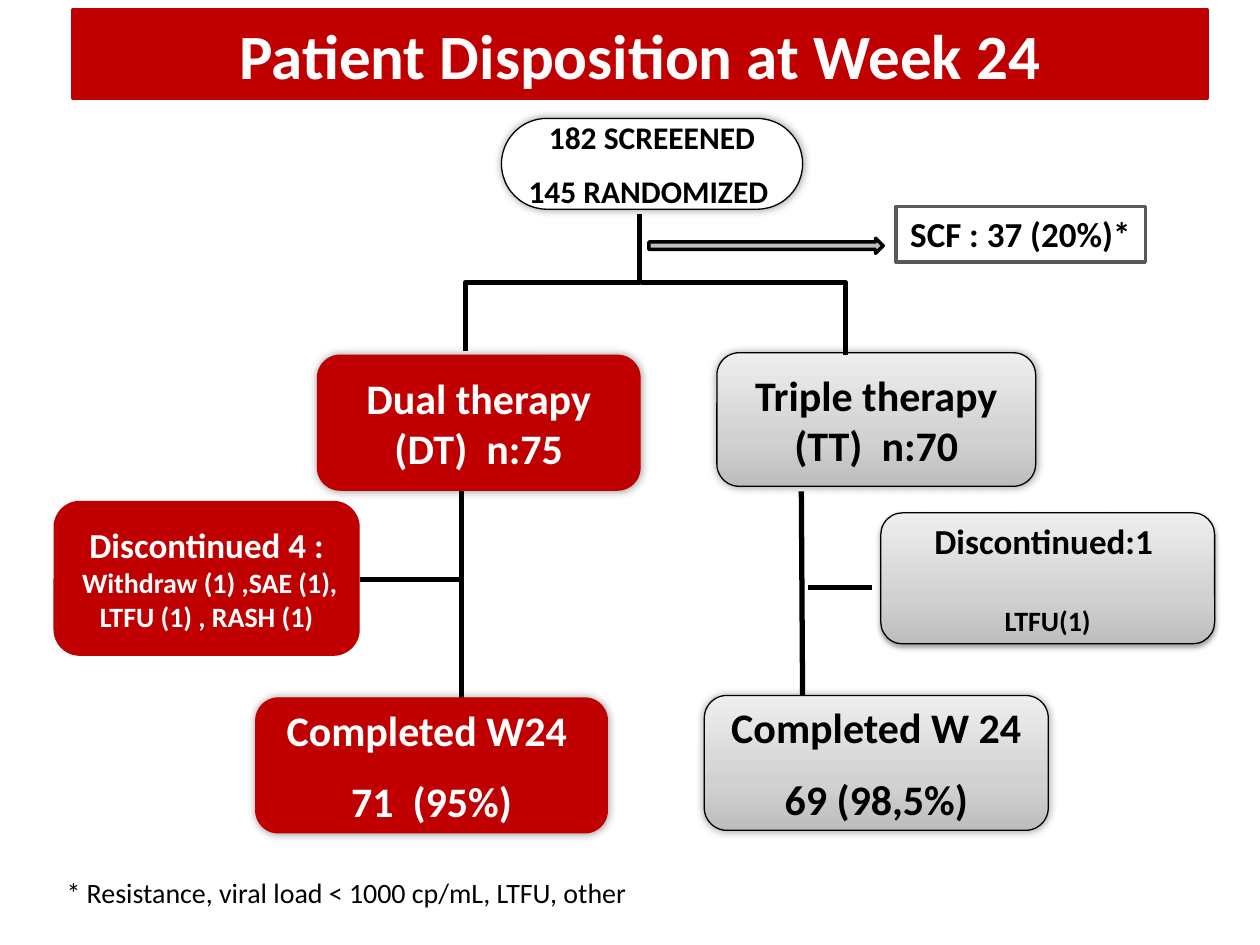
from copy import deepcopy
from lxml.etree import SubElement
from pptx import Presentation
from pptx.dml.color import RGBColor
from pptx.enum.shapes import MSO_CONNECTOR, MSO_SHAPE
from pptx.enum.text import MSO_ANCHOR, PP_ALIGN
from pptx.oxml.ns import qn
from pptx.util import Inches, Pt

RED, BLACK, WHITE = "C00000", "000000", "FFFFFF"
GREY = [(0, "BDBDBD"), (0.35, "D1D1D1"), (1, "EEEEEE")]
GLOW, DROP = (5, 0, 40), (3.1, 1.6, 38)
ROUND = 0.167

TITLE = "Patient Disposition at Week 24"
FOOTNOTE = "* Resistance, viral load < 1000 cp/mL, LTFU, other"

# position, corner, fill, line, text colour, shadow, [(text, size, space before)]
BOXES = [
    ((3.98, 0.94, 2.39, 0.72), 0.5, WHITE, BLACK, BLACK, GLOW,
     [("182 SCREEENED", 18, 0), ("145 RANDOMIZED ", 18, 9)]),
    ((2.03, 5.54, 2.79, 1.07), ROUND, RED, RED, WHITE, GLOW,
     [("Completed W24 ", 24, 0), ("71  (95%)", 24, 12)]),
    ((5.59, 5.52, 2.73, 1.07), ROUND, GREY, BLACK, BLACK, GLOW,
     [("Completed W 24", 24, 0), ("69 (98,5%)", 24, 12)]),
    ((0.43, 3.98, 2.42, 1.22), ROUND, RED, RED, WHITE, None,
     [("Discontinued 4 :", 20, 0),
      (" Withdraw (1) ,SAE (1), LTFU (1) , RASH (1)", 16, 0)]),
    ((6.99, 4.07, 2.65, 1.04), ROUND, GREY, BLACK, BLACK, DROP,
     [("Discontinued:1 ", 20, 0), ("LTFU(1)", 16, 24)]),
    ((2.52, 2.82, 2.56, 1.07), ROUND, RED, RED, WHITE, GLOW,
     [("Dual therapy (DT)  n:75", 24, 0)]),
    ((5.69, 2.8, 2.53, 1.06), ROUND, GREY, BLACK, BLACK, GLOW,
     [("Triple therapy (TT)  n:70", 24, 0)]),
]
LINES = [
    (6.92, 4.66, 6.41, 4.66),
    (3.66, 3.88, 3.66, 5.54),
    (6.36, 3.9, 6.37, 5.52),
    (3.66, 4.6, 2.86, 4.6),
]


def rgb(color):
    """Turn a hex string into a colour."""
    return RGBColor.from_string(color)


def paint(sp, fill, line, width):
    """Fill and outline a shape, with a solid colour or gradient stops."""
    sp.shadow.inherit = False
    if isinstance(fill, str):
        sp.fill.solid()
        sp.fill.fore_color.rgb = rgb(fill)
    else:
        sp.fill.gradient()
        sp.fill.gradient_angle = 90
        stops = sp._element.spPr.find(".//" + qn("a:gsLst"))
        stops.insert(1, deepcopy(stops[0]))
        for stop, (position, color) in zip(sp.fill.gradient_stops, fill):
            stop.position = position
            stop.color.rgb = rgb(color)
    sp.line.color.rgb = rgb(line)
    sp.line.width = Pt(width)


def cast_shadow(sp, blur, distance, alpha):
    """Add a black shadow below a shape."""
    effects = sp._element.spPr.find(qn("a:effectLst"))
    outer = SubElement(effects, qn("a:outerShdw"), blurRad=str(Pt(blur)),
                       dist=str(Pt(distance)), dir="5400000", rotWithShape="0")
    color = SubElement(outer, qn("a:srgbClr"), val=BLACK)
    SubElement(color, qn("a:alpha"), val=str(alpha * 1000))


def write(sp, paragraphs, color, bold=True, align=PP_ALIGN.CENTER,
          anchor=MSO_ANCHOR.MIDDLE, wrap=True):
    """Write paragraphs of (text, size, space before) into a shape."""
    tf = sp.text_frame
    tf.word_wrap = wrap
    tf.vertical_anchor = anchor
    for i, (text, size, before) in enumerate(paragraphs):
        p = tf.add_paragraph() if i else tf.paragraphs[0]
        p.alignment = align
        p.space_before = Pt(before)
        r = p.add_run()
        r.text = text
        r.font.name = "Calibri"
        r.font.size = Pt(size)
        r.font.bold = bold
        r.font.color.rgb = rgb(color)


def add_shape(s, kind, at, fill, line, width):
    """Add a painted preset shape."""
    sp = s.shapes.add_shape(kind, *map(Inches, at))
    paint(sp, fill, line, width)
    return sp


def add_line(s, kind, ends):
    """Add a thick black connector and return it."""
    c = s.shapes.add_connector(kind, *map(Inches, ends))
    c.line.color.rgb = rgb(BLACK)
    c.line.width = Pt(3)
    SubElement(c._element.spPr, qn("a:effectLst"))
    return c


def main():
    """Build the patient flow slide."""
    prs = Presentation()
    prs.slide_width, prs.slide_height = Inches(10), Inches(7.5)
    s = prs.slides.add_slide(prs.slide_layouts[5])

    title = s.shapes.title
    title.left, title.top, title.width, title.height = map(
        Inches, (0.58, 0.08, 9, 0.7))
    paint(title, RED, RED, 2)
    write(title, [(TITLE, 36, 0)], WHITE)

    for ends in LINES:
        add_line(s, MSO_CONNECTOR.STRAIGHT, ends)

    for at, corner, fill, line, color, shadow, paragraphs in BOXES:
        sp = add_shape(s, MSO_SHAPE.ROUNDED_RECTANGLE, at, fill, line, 0.75)
        sp.adjustments[0] = corner
        if shadow:
            cast_shadow(sp, *shadow)
        write(sp, paragraphs, color)

    to_dual = add_line(s, MSO_CONNECTOR.ELBOW, (3.84, 1.55, 4.93, 2.93))
    to_dual._element.spPr.find(qn("a:xfrm")).set("rot", "5400000")
    to_triple = add_line(s, MSO_CONNECTOR.ELBOW, (5.09, 2.24, 6.71, 2.82))
    to_triple._element.spPr.find(qn("a:prstGeom")).set("prst", "bentConnector2")

    failures = add_shape(s, MSO_SHAPE.RECTANGLE, (7.11, 1.64, 1.98, 0.44),
                         WHITE, "595959", 2)
    write(failures, [("SCF : 37 (20%)*", 20, 0)], BLACK, anchor=MSO_ANCHOR.TOP)
    add_shape(s, MSO_SHAPE.RIGHT_ARROW, (5.15, 1.89, 1.86, 0.12),
              "BFBFBF", BLACK, 2)

    note = s.shapes.add_textbox(*map(Inches, (0.43, 6.9, 4.79, 0.37)))
    write(note, [(FOOTNOTE, 16, 0)], BLACK, bold=False, align=PP_ALIGN.LEFT,
          anchor=MSO_ANCHOR.TOP, wrap=False)

    prs.save("out.pptx")


if __name__ == "__main__":
    main()
